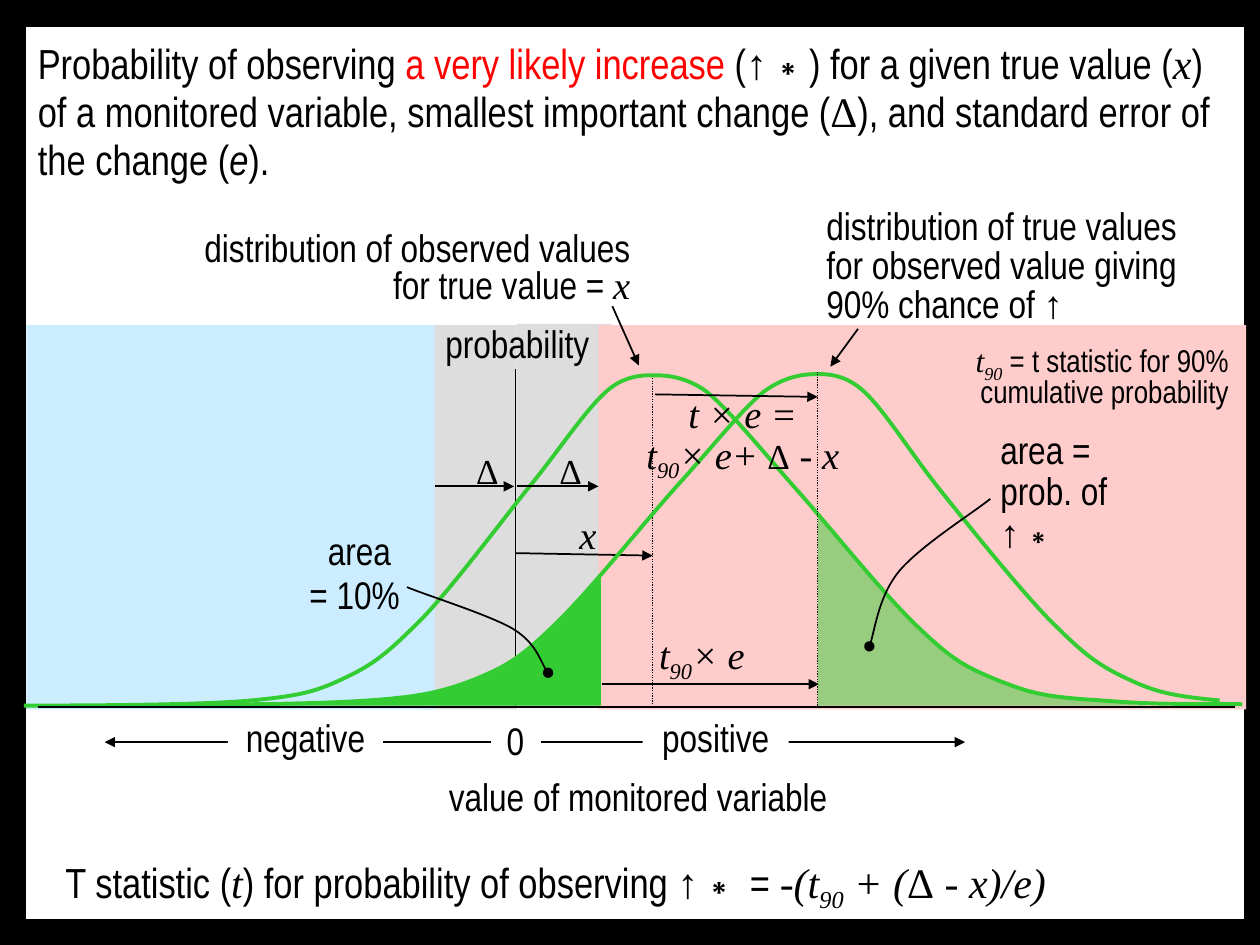
from dataclasses import dataclass
from lxml import etree
from pptx import Presentation
from pptx import util as u
from pptx.dml.color import RGBColor
from pptx.enum import dml, shapes, text
from pptx.oxml.ns import qn

LEFT, MID, RIGHT = text.PP_ALIGN.LEFT, text.PP_ALIGN.CENTER, text.PP_ALIGN.RIGHT
TOP, LOW = text.MSO_ANCHOR.TOP, text.MSO_ANCHOR.BOTTOM


@dataclass(frozen=True)
class Theme:
    black: str = "000000"
    white: str = "FFFFFF"
    red: str = "FF0000"
    green: str = "33CC33"
    grey: str = "DDDDDD"
    blue: str = "CCECFF"
    pink: str = "FFCCCC"
    sans: str = "Arial Narrow"
    serif: str = "Times New Roman"
    head: int = 24
    body: int = 22
    delta: int = 20
    note: int = 18


T = Theme()

# Run styles: font, italic, colour, subscript
RUNS = {
    "plain": (T.sans, False, T.black, False),
    "slant": (T.sans, True, T.black, False),
    "alert": (T.sans, False, T.red, False),
    "greek": (T.serif, False, T.black, False),
    "math": (T.serif, True, T.black, False),
    "sub": (T.serif, True, T.black, True),
}


def write(frame, parts, size=T.body, align=LEFT, gap=0.8, before=0,
          anchor=TOP, wrap=True, grow=True, pads=(0.1, 0.05, 0.1, 0.05)):
    """Fill a frame with (text, style[, size]) parts; a newline breaks the line."""
    frame.word_wrap = wrap
    frame.vertical_anchor = anchor
    fit = text.MSO_AUTO_SIZE
    frame.auto_size = fit.SHAPE_TO_FIT_TEXT if grow else fit.NONE
    (frame.margin_left, frame.margin_top,
     frame.margin_right, frame.margin_bottom) = map(u.Inches, pads)
    para = frame.paragraphs[0]
    para.alignment, para.line_spacing = align, gap
    para.space_before = u.Pt(before)
    for words, style, *own in parts:
        face, slant, ink, sub = RUNS[style]
        for n, line in enumerate(words.split("\n")):
            if n:
                para.add_line_break()
            if not line:
                continue
            run = para.add_run()
            run.text = line
            font = run.font
            font.name, font.italic, font.bold = face, slant, False
            font.size = u.Pt(own[0] if own else size)
            font.color.rgb = RGBColor.from_string(ink)
            if sub:
                run._r.get_or_add_rPr().set("baseline", "-25000")


class Deck:
    """A slide on a grid of 100 columns by 75 rows."""

    def __init__(self, theme):
        self.theme = theme
        self.prs = Presentation()
        self.prs.slide_width, self.prs.slide_height = u.Inches(10), u.Inches(7.5)
        self.unit = self.prs.slide_width / 100
        self.slide = self.prs.slides.add_slide(self.prs.slide_layouts[5])
        self.tree = self.slide.shapes
        self.tint(self.slide.background.fill, theme.black)

    def grid(self, *nums):
        return [round(n * self.unit) for n in nums]

    def tint(self, fill, color):
        fill.solid()
        fill.fore_color.rgb = RGBColor.from_string(color)

    def pen(self, line, color, width):
        self.tint(line.fill, color)
        line.width = u.Pt(width)

    def tip(self, shape, tag, kind):
        etree.SubElement(shape.line._get_or_add_ln(), qn("a:" + tag), type=kind)

    def title(self, at, parts, **style):
        head = self.tree.title
        head.left, head.top, head.width, head.height = self.grid(*at)
        self.tint(head.fill, self.theme.white)
        self.pen(head.line, self.theme.black, 0.75)
        write(head.text_frame, parts, **style)

    def band(self, at, color):
        box = self.tree.add_shape(shapes.MSO_SHAPE.RECTANGLE, *self.grid(*at))
        box.shadow.inherit = False
        self.tint(box.fill, color)
        box.line.fill.background()
        return box

    def tag(self, at, words):
        box = self.band(at, self.theme.white)
        write(box.text_frame, [(words, "plain")], align=MID, pads=(0.06, 0, 0.06, 0))

    def label(self, at, parts, **style):
        box = self.tree.add_textbox(*self.grid(*at))
        write(box.text_frame, parts, **style)

    def line(self, ends, width=1, arrow=False, dots=False):
        link = self.tree.add_connector(shapes.MSO_CONNECTOR.STRAIGHT, *self.grid(*ends))
        self.pen(link.line, self.theme.black, width)
        if dots:
            link.line.dash_style = dml.MSO_LINE.ROUND_DOT
        if arrow:
            self.tip(link, "tailEnd", "triangle")
        etree.SubElement(link._element.spPr, qn("a:effectLst"))

    def curve(self, points, straight=0, fill=None, alpha=None, ink=None, width=1, dot=False):
        """Straight legs first, then cubic legs of three points each."""
        pen = self.tree.build_freeform(*self.grid(*points[0]), scale=1.0)
        pen.add_line_segments([self.grid(*p) for p in points[1:]], close=False)
        shape = pen.convert_to_shape()
        shape.shadow.inherit = False
        legs = shape._element.xpath(".//a:lnTo")[straight:]
        for n in range(0, len(legs), 3):
            bend = etree.Element(qn("a:cubicBezTo"))
            legs[n].addprevious(bend)
            for leg in legs[n:n + 3]:
                bend.append(leg[0])
                leg.getparent().remove(leg)
        if fill:
            self.tint(shape.fill, fill)
            if alpha:
                color = shape._element.spPr.find(qn("a:solidFill"))[0]
                etree.SubElement(color, qn("a:alpha"), val=str(alpha * 1000))
        else:
            shape.fill.background()
        if ink:
            self.pen(shape.line, ink, width)
        else:
            shape.line.fill.background()
        if dot:
            self.tip(shape, "headEnd", "oval")


def main():
    d = Deck(T)
    # Panel with heading
    d.title((2, 2.1, 96.8, 70.9), [
        ("Probability of observing ", "plain"), ("a very likely increase", "alert"),
        (" (↑∗) for a given true value (", "plain"), ("x", "math"),
        (") of a monitored variable, smallest important change (", "plain"),
        ("Δ", "greek"), ("), and standard error of the change (", "plain"),
        ("e", "slant"), (").", "plain"),
    ], size=T.head, gap=0.95, before=5, grow=False, pads=(0.1, 0.12, 0.1, 0.05))

    # Zones and axes
    d.band((33.4, 25.8, 7.6, 30.5), T.grey)
    d.band((41, 25.7, 7.6, 30.5), T.grey)
    d.line((40.9, 29.3, 40.9, 56), 0.75)
    d.band((2.1, 25.8, 32.4, 30.5), T.blue)
    d.band((47.5, 25.8, 51.4, 30.5), T.pink)
    d.label((34.3, 25.6, 13.5, 4), [("probability", "plain")], align=MID, wrap=False)
    d.label((34.5, 61.6, 32.3, 4), [("value of monitored variable", "plain")],
            align=MID, wrap=False)
    for start, end in ((42.9, 76.6), (39, 8.3)):
        d.line((start, 58.9, end, 58.9), 0.75, arrow=True)
    d.tag((51, 57.4, 11.6, 3), "positive")
    d.tag((18.1, 57.4, 12.3, 3), "negative")

    # Observed values and offset x
    d.label((13.4, 18, 37.6, 6.9), [
        ("distribution of observed values for true value = ", "plain"), ("x", "math")],
        align=RIGHT)
    d.line((48.6, 24.3, 50.7, 29), arrow=True)
    d.line((51.8, 56.1, 51.8, 29.7), 0.75, dots=True)
    d.label((45, 40.7, 2.1, 4), [("x", "math")], align=MID, anchor=LOW)
    d.line((40.9, 43.9, 51.8, 44.1), arrow=True)

    # Bell curves and the 10% tail
    d.curve([(1.9, 56), (4.9, 56), (15.6, 56), (19.9, 55.6),
             (24.2, 55.2), (25.3, 54.8), (27.6, 53.7), (29.9, 52.6), (31.1, 51.5),
             (33.5, 49.1), (35.9, 46.6), (39.4, 41.9), (41.8, 38.9), (44.2, 36),
             (46.4, 32.6), (48.1, 31.1), (49.7, 29.6), (51.6, 29.8), (52, 29.8),
             (52.3, 29.8), (54.2, 29.7), (56.1, 31.1), (57.9, 32.6), (60.1, 35.3),
             (62.9, 38.5), (65.7, 41.6), (70.2, 47.3), (73, 49.9), (75.7, 52.5),
             (76.8, 53), (79.2, 54), (81.6, 54.9), (82.4, 55.3), (87.5, 55.6),
             (92.6, 56), (94, 55.8), (98.6, 55.9)], ink=T.green, width=2.25)
    d.curve([(47.7, 56), (47.7, 45.7), (43.7, 50), (42.3, 51.7), (41.4, 51.9),
             (40.2, 52.9), (38.4, 53.9), (37, 54.2), (34.7, 55), (29.5, 55.9),
             (26.8, 55.7), (21.7, 56)], straight=2, fill=T.green)
    d.curve([(96.8, 55.6), (92.5, 55.2), (91.4, 54.8), (89.1, 53.7),
             (86.8, 52.6), (85.6, 51.5), (83.2, 49.1), (80.8, 46.6), (77.1, 42),
             (74.7, 39), (72.3, 36), (70.3, 32.7), (68.6, 31.1), (67, 29.6),
             (65.4, 29.7), (64.8, 29.7), (64.2, 29.7), (62.5, 29.7), (60.6, 31.1),
             (58.8, 32.6), (56.7, 35.3), (53.8, 38.5), (51, 41.6), (46.5, 47.3),
             (43.7, 49.9), (41, 52.5), (39.9, 53), (37.5, 54), (35.1, 54.9),
             (33.5, 55.3), (29.2, 55.6), (24.8, 55.9), (19, 55.9), (11.4, 56)],
            ink=T.green, width=2.25)
    d.line((3, 56.1, 98, 56.1), 1.5)
    d.line((64.9, 56, 64.9, 29.5), 0.75, dots=True)
    d.label((18.5, 41.6, 14.2, 8.1), [("area \n= 10%", "plain")], align=RIGHT, gap=0.95)
    d.curve([(43.5, 53.4), (43, 52.8), (42.5, 51), (40.7, 49.9), (38.8, 48.8),
             (34, 47.3), (32.3, 46.6)], ink=T.black, dot=True)

    # Smallest important change on each side of zero
    for left, start, end in ((43.4, 41, 47.5), (36.8, 34.5, 40.8)):
        d.label((left, 35.8, 2.1, 3.7), [("Δ", "greek")], size=T.delta,
                align=MID, anchor=LOW)
        d.line((start, 38.6, end, 38.6), arrow=True)

    # t statistics
    d.label((47.8, 50.3, 15.8, 4), [("t", "math"), ("90", "sub"), ("× e", "math")],
            align=MID, anchor=LOW)
    d.line((47.8, 54.3, 65, 54.3), arrow=True)
    d.label((4.2, 67.9, 80.4, 4.2), [
        ("T statistic (", "plain"), ("t", "math"),
        (") for probability of observing ↑∗ = ", "plain"), ("-(t", "math"),
        ("90", "sub"), (" + (", "math"), ("Δ", "greek"), (" - x)/e)", "math")],
        size=T.head, wrap=False)
    d.label((49.8, 31.5, 18.3, 6.9), [
        ("t × e =\nt", "math"), ("90", "sub"), ("× e+ ", "math"),
        ("Δ", "greek", T.delta), (" - x", "math")], align=MID, anchor=LOW)
    d.line((52, 31.3, 64.9, 31.5), arrow=True)
    d.tag((39.6, 57.6, 2.6, 3), "0")

    # True values and the shaded probability
    d.label((64.6, 16.1, 32.8, 10.5), [
        ("distribution of true values for observed value giving 90% chance of ↑", "plain")],
        gap=0.85)
    d.line((68.1, 26.1, 65.9, 29.1), arrow=True)
    d.curve([(64.9, 56), (64.9, 40.7), (69.6, 46.3), (71.6, 48.6), (72.3, 49.1),
             (73.5, 50.5), (75.3, 52), (75.7, 52.4), (78.1, 53.6), (82.9, 55.4),
             (85.8, 55.5), (90.9, 56)], straight=2, fill=T.green, alpha=50)
    d.label((78.4, 33.7, 13.5, 7.7), [("area =\nprob. of ↑∗", "plain")], gap=0.9)
    d.curve([(69, 51.3), (69.4, 50.3), (69.8, 47.2), (71.4, 45.3), (73.1, 43.3),
             (77.1, 40.8), (78.6, 39.6)], ink=T.black, dot=True)
    d.label((75.4, 26.9, 23.1, 5.9), [
        ("t", "math"), ("90", "sub"),
        (" = t statistic for 90%\ncumulative probability", "plain")],
        size=T.note, align=RIGHT)
    d.prs.save("out.pptx")


if __name__ == "__main__":
    main()
